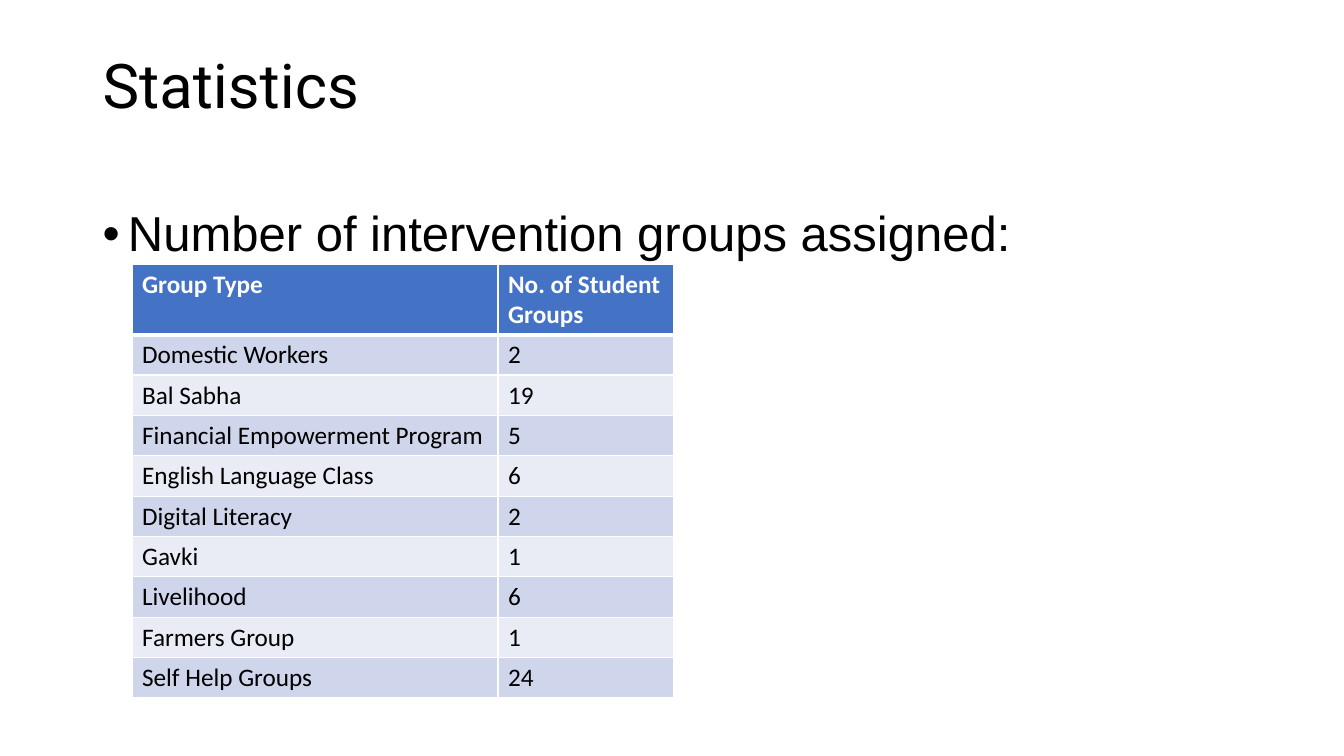
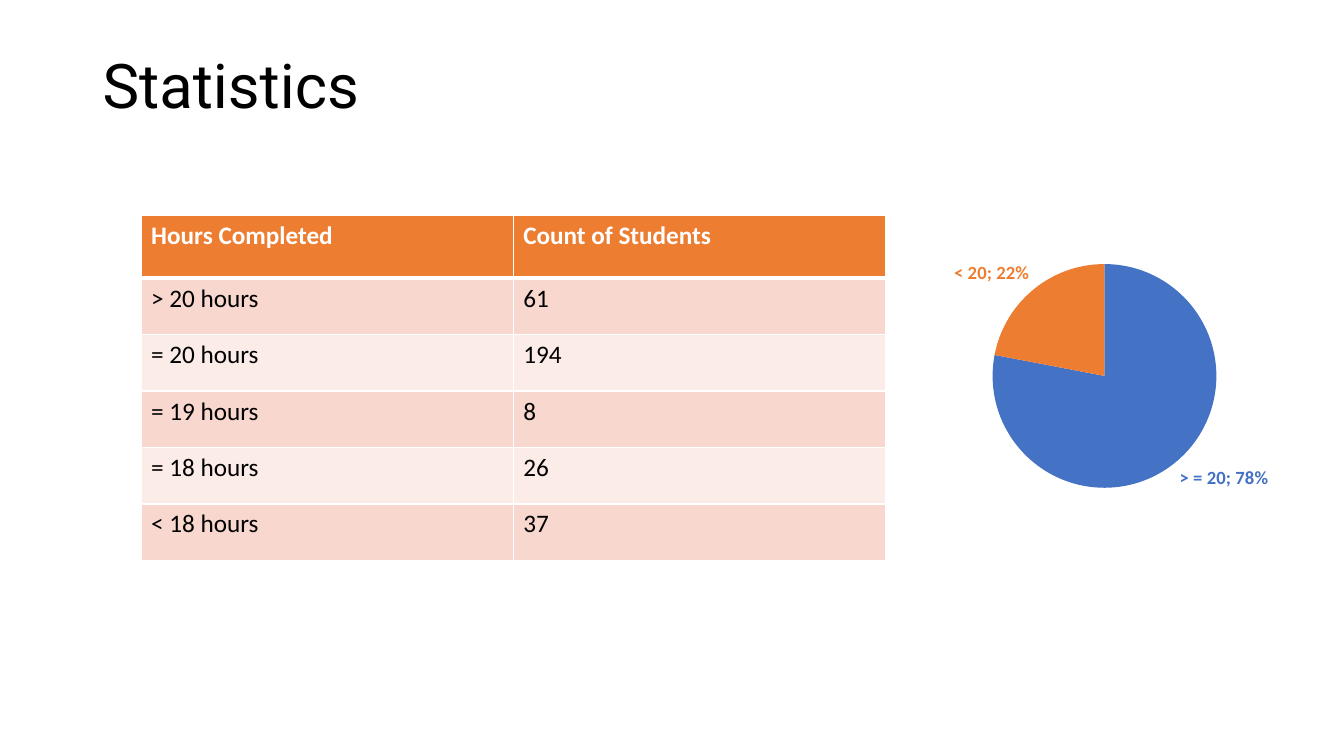
from lxml import etree
from pptx import Presentation
from pptx.chart.data import CategoryChartData
from pptx.dml.color import RGBColor
from pptx.enum import chart as chart_enum, text as text_enum
from pptx.oxml import ns
from pptx.util import Inches, Pt

BLACK = RGBColor(0x00, 0x00, 0x00)
WHITE = RGBColor(0xFF, 0xFF, 0xFF)
BLUE = RGBColor(0x44, 0x72, 0xC4)
BLUE_BANDS = (RGBColor(0xCF, 0xD5, 0xEA), RGBColor(0xE9, 0xEB, 0xF5))
ORANGE = RGBColor(0xED, 0x7D, 0x31)
ORANGE_BANDS = (RGBColor(0xF8, 0xD7, 0xCE), RGBColor(0xFC, 0xEC, 0xE8))

TITLE_FONT = {"name": "Roboto", "size": Pt(44)}
BODY_FONT = {"name": "Arial", "size": Pt(35)}
CELL_FONT = {"name": "Calibri", "size": Pt(18)}
LABEL_FONT = {"name": "Calibri", "size": Pt(13.3), "bold": True}


def add_text(slide, content, box, font_format, anchor, bullet=None):
    shape = slide.shapes.add_textbox(*map(Inches, box))
    frame = shape.text_frame
    frame.word_wrap = True
    frame.vertical_anchor = anchor
    paragraph = frame.paragraphs[0]
    paragraph.text = content
    paragraph.line_spacing = 0.9
    if bullet:
        properties = paragraph._p.get_or_add_pPr()
        properties.set("marL", str(Inches(0.25)))
        properties.set("indent", str(-Inches(0.25)))
        etree.SubElement(properties, ns.qn("a:buFont"), typeface="Arial")
        etree.SubElement(properties, ns.qn("a:buChar"), char=bullet)
    font = paragraph.runs[0].font
    font.color.rgb = BLACK
    for name, value in font_format.items():
        setattr(font, name, value)


def add_banded_table(slide, rows, left, top, widths, heights, header_color, bands):
    header_height, row_height = heights
    total_height = header_height + row_height * (len(rows) - 1)
    table = slide.shapes.add_table(
        len(rows), len(widths), Inches(left), Inches(top),
        Inches(sum(widths)), Inches(total_height)).table
    table.horz_banding = False
    for column, width in zip(table.columns, widths):
        column.width = Inches(width)
    for row_index, values in enumerate(rows):
        is_header = row_index == 0
        table.rows[row_index].height = Inches(header_height if is_header else row_height)
        # The rule between header and body is thicker than the others
        borders = {"lnL": 1, "lnR": 1,
                   "lnT": 3 if row_index == 1 else 1,
                   "lnB": 3 if is_header else 1}
        for column_index, value in enumerate(values):
            cell = table.cell(row_index, column_index)
            properties = cell._tc.get_or_add_tcPr()
            for side, width in borders.items():
                line = etree.SubElement(properties, ns.qn(f"a:{side}"), w=str(Pt(width)))
                fill = etree.SubElement(line, ns.qn("a:solidFill"))
                etree.SubElement(fill, ns.qn("a:srgbClr"), val=str(WHITE))
            cell.fill.solid()
            cell.fill.fore_color.rgb = header_color if is_header else bands[(row_index - 1) % 2]
            cell.text = value
            font = cell.text_frame.paragraphs[0].runs[0].font
            font.bold = is_header
            font.color.rgb = WHITE if is_header else BLACK
            for name, format_value in CELL_FONT.items():
                setattr(font, name, format_value)


presentation = Presentation()
presentation.slide_width = Inches(13.33)
presentation.slide_height = Inches(7.5)

# Both slides carry the same title
slides = []
for _ in range(2):
    slide = presentation.slides.add_slide(presentation.slide_layouts[6])
    add_text(slide, "Statistics", (0.92, 0.31, 9.55, 1.13), TITLE_FONT,
             text_enum.MSO_ANCHOR.MIDDLE)
    slides.append(slide)
groups_slide, hours_slide = slides

# Intervention groups
add_text(groups_slide, "Number of intervention groups assigned:",
         (0.92, 2.03, 11.5, 4.76), BODY_FONT, text_enum.MSO_ANCHOR.TOP, bullet="•")
group_rows = [
    ("Group Type", "No. of Student Groups"),
    ("Domestic Workers", "2"),
    ("Bal Sabha", "19"),
    ("Financial Empowerment Program", "5"),
    ("English Language Class", "6"),
    ("Digital Literacy", "2"),
    ("Gavki", "1"),
    ("Livelihood", "6"),
    ("Farmers Group", "1"),
    ("Self Help Groups", "24"),
]
add_banded_table(groups_slide, group_rows, 1.31, 2.62, (3.63, 1.74), (0.69, 0.4),
                 BLUE, BLUE_BANDS)

# Hours completed
hour_rows = [
    ("Hours Completed", "Count of Students"),
    ("> 20 hours", "61"),
    ("= 20 hours", "194"),
    ("= 19 hours", "8"),
    ("= 18 hours", "26"),
    ("< 18 hours", "37"),
]
add_banded_table(hours_slide, hour_rows, 1.4, 2.14, (3.69, 3.69), (0.62, 0.56),
                 ORANGE, ORANGE_BANDS)

# Share of students reaching 20 hours
chart_data = CategoryChartData(number_format="0%")
chart_data.categories = ["> = 20", "< 20"]
chart_data.add_series("Series 1", (0.78, 0.22))
chart = hours_slide.shapes.add_chart(
    chart_enum.XL_CHART_TYPE.PIE, Inches(8.33), Inches(2.35),
    Inches(5), Inches(3), chart_data).chart
chart.has_legend = False
chart.has_title = False
chart.font.name = "Calibri"
chart.font.size = Pt(10)
chart.font.color.rgb = BLACK
plot = chart.plots[0]
plot.vary_by_categories = True
series = plot.series[0]
for index, color in enumerate((BLUE, ORANGE)):
    point = series.points[index]
    point.format.fill.solid()
    point.format.fill.fore_color.rgb = color
    label = point.data_label
    label.position = chart_enum.XL_LABEL_POSITION.OUTSIDE_END
    label.font.color.rgb = color
    for name, value in LABEL_FONT.items():
        setattr(label.font, name, value)

# Labels read "category; value"
for label_element in series._element.iter(ns.qn("c:dLbl")):
    label_element.find(ns.qn("c:showCatName")).set("val", "1")
    number_format = etree.Element(ns.qn("c:numFmt"), formatCode="0%", sourceLinked="0")
    label_element.find(ns.qn("c:idx")).addnext(number_format)
    etree.SubElement(label_element, ns.qn("c:separator")).text = "; "

# Pie position as fractions of the chart area
plot_area = chart._chartSpace.find(".//" + ns.qn("c:plotArea"))
layout = plot_area.find(ns.qn("c:layout"))
if layout is None:
    layout = etree.Element(ns.qn("c:layout"))
    plot_area.insert(0, layout)
manual_layout = etree.SubElement(layout, ns.qn("c:manualLayout"))
for tag, value in {"layoutTarget": "inner", "xMode": "edge", "yMode": "edge",
                   "x": 0.3, "y": 0.09, "w": 0.45, "h": 0.74}.items():
    etree.SubElement(manual_layout, ns.qn(f"c:{tag}"), val=str(value))

presentation.save("out.pptx")
